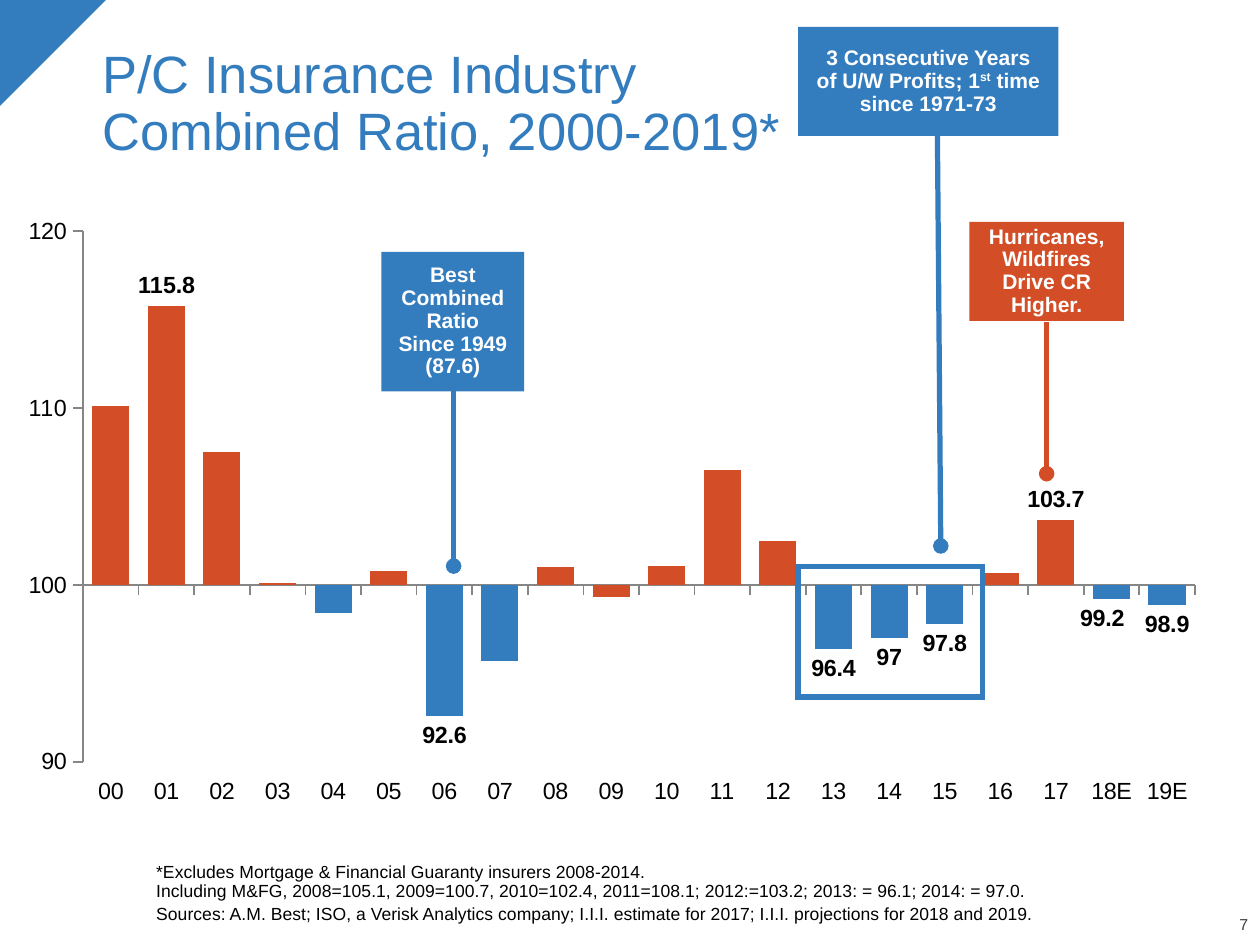
"""Build the slide on the combined ratio of the P/C insurance industry."""
from lxml import etree
from pptx import Presentation
from pptx.chart.data import CategoryChartData
from pptx.dml.color import RGBColor
from pptx.enum.chart import XL_CHART_TYPE as ChartType, XL_LABEL_POSITION as LabelPosition
from pptx.enum.chart import XL_TICK_LABEL_POSITION as TickLabels, XL_TICK_MARK as TickMark
from pptx.enum.shapes import MSO_CONNECTOR as Connector, MSO_SHAPE as Shape
from pptx.enum.text import MSO_ANCHOR as Anchor, PP_ALIGN as Align
from pptx.oxml import parse_xml
from pptx.oxml.ns import nsdecls, qn
from pptx.util import Inches, Pt

COLORS = {"blue": "337DBE", "red": "D34D27", "black": "000000",
          "white": "FFFFFF", "gray": "404040", "axis": "868686"}
RATIOS = {
    "00": 110.1, "01": 115.8, "02": 107.5, "03": 100.1, "04": 98.4,
    "05": 100.8, "06": 92.6, "07": 95.7, "08": 101, "09": 99.3,
    "10": 101.1, "11": 106.5, "12": 102.5, "13": 96.4, "14": 97,
    "15": 97.8, "16": 100.7, "17": 103.7, "18E": 99.2, "19E": 98.9,
}
PROFIT_YEARS = {"04", "06", "07", "13", "14", "15", "18E", "19E"}
LABELED_YEARS = {"01", "06", "13", "14", "15", "17", "18E", "19E"}


def color(name):
    return RGBColor.from_string(COLORS[name])


def manual_layout(**values):
    tags = "".join(f'<c:{tag} val="{value}"/>' for tag, value in values.items())
    return parse_xml(f'<c:layout {nsdecls("c")}><c:manualLayout>{tags}</c:manualLayout></c:layout>')


def write_text(shape, paragraphs, size, ink, bold=False, align=Align.LEFT,
               anchor=Anchor.BOTTOM, insets=(0.1, 0.05), space_before=0):
    frame = shape.text_frame
    frame.word_wrap = True
    frame.vertical_anchor = anchor
    frame.margin_left = frame.margin_right = Inches(insets[0])
    frame.margin_top = frame.margin_bottom = Inches(insets[1])
    for index, pieces in enumerate(paragraphs):
        paragraph = frame.add_paragraph() if index else frame.paragraphs[0]
        paragraph.alignment = align
        paragraph.line_spacing = 0.9
        paragraph.space_before = Pt(space_before if index else 0)
        for position, piece in enumerate(pieces):
            for line, words in enumerate(piece.split("\n")):
                if line:
                    paragraph.add_line_break()
                run = paragraph.add_run()
                run.text = words
                run.font.name = "Arial"
                run.font.size = Pt(size)
                run.font.bold = bold
                run.font.color.rgb = color(ink)
                if position % 2:
                    run._r.get_or_add_rPr().set("baseline", "30000")


class SlideBuilder:
    def __init__(self, slide, line_width=2.25):
        self.slide = slide
        self.line_width = Pt(line_width)

    def text(self, place, paragraphs, size, ink, **style):
        box = self.slide.shapes.add_textbox(*map(Inches, place))
        write_text(box, paragraphs, size, ink, **style)

    def shape(self, kind, place, fill=None, line=None):
        shape = self.slide.shapes.add_shape(kind, *map(Inches, place))
        shape.shadow.inherit = False
        if fill:
            shape.fill.solid()
            shape.fill.fore_color.rgb = color(fill)
        else:
            shape.fill.background()
        if line:
            shape.line.color.rgb = color(line)
            shape.line.width = self.line_width
            etree.SubElement(shape.line._get_or_add_ln(), qn("a:miter"), lim="800000")
        else:
            shape.line.fill.background()
        return shape

    def pointer(self, start, end, ink):
        line = self.slide.shapes.add_connector(Connector.STRAIGHT, *map(Inches, start + end))
        line.line.color.rgb = color(ink)
        line.line.width = self.line_width
        etree.SubElement(line.line._get_or_add_ln(), qn("a:tailEnd"), type="oval")
        etree.SubElement(line._element.spPr, qn("a:effectLst"))

    def callout(self, place, pieces, ink, start, end, inset=0.04):
        box = self.shape(Shape.RECTANGLE, place, fill=ink)
        write_text(box, [pieces], 9, "white", bold=True, align=Align.CENTER,
                   anchor=Anchor.MIDDLE, insets=(0.1, inset))
        self.pointer(start, end, ink)

    def ratio_chart(self, place):
        data = CategoryChartData(number_format="General")
        data.categories = list(RATIOS)
        data.add_series("Series 1", list(RATIOS.values()))
        chart = self.slide.shapes.add_chart(
            ChartType.COLUMN_CLUSTERED, *map(Inches, place), data).chart
        chart.has_legend = False
        chart.has_title = False
        chart.font.name = "Arial"
        chart.font.size = Pt(10)
        chart.font.color.rgb = color("black")
        self.style_axes(chart)
        self.style_columns(chart)
        plot_area = chart.element.find(".//" + qn("c:plotArea"))
        for layout in plot_area.findall(qn("c:layout")):
            plot_area.remove(layout)
        plot_area.insert(0, manual_layout(layoutTarget="inner", xMode="edge", yMode="edge",
                                          x=0.045, y=0.063, w=0.954, h=0.838))

    def style_axes(self, chart):
        for axis in (chart.category_axis, chart.value_axis):
            axis.has_major_gridlines = False
            axis.major_tick_mark = TickMark.OUTSIDE
            axis.minor_tick_mark = TickMark.NONE
            axis.tick_label_position = TickLabels.LOW
            axis.tick_labels.font.size = Pt(10)
            axis.format.line.color.rgb = color("axis")
            axis.format.line.width = Pt(0.75)
        values = chart.value_axis
        values.minimum_scale, values.maximum_scale = 90, 120
        values.major_unit = 10
        values.crosses_at = 100
        values.tick_labels.number_format = "0"
        values.tick_labels.number_format_is_linked = False

    def style_columns(self, chart):
        plot = chart.plots[0]
        plot.gap_width = 50
        plot.vary_by_categories = False
        series = plot.series[0]
        series.invert_if_negative = False
        series.format.fill.solid()
        series.format.fill.fore_color.rgb = color("red")
        for index, year in enumerate(RATIOS):
            if year in PROFIT_YEARS:
                fill = series.points[index].format.fill
                fill.solid()
                fill.fore_color.rgb = color("blue")
            if year in LABELED_YEARS:
                label = series.points[index].data_label
                label.font.size = Pt(10)
                label.font.bold = True
                label.font.color.rgb = color("black")
                label.position = LabelPosition.OUTSIDE_END
        estimate = list(RATIOS).index("18E")
        label = chart.element.xpath(f'.//c:dLbl[c:idx/@val="{estimate}"]')[0]
        label.insert(1, manual_layout(x=-0.008, y=0))


def main():
    presentation = Presentation()
    presentation.slide_width = Inches(7.5)
    presentation.slide_height = presentation.slide_width * 3 // 4
    builder = SlideBuilder(presentation.slides.add_slide(presentation.slide_layouts[6]))

    corner = builder.shape(Shape.RIGHT_TRIANGLE, (0, 0, 0.63, 0.63), fill="blue")
    corner.rotation = 90
    builder.text((7.07, 5.46, 0.36, 0.1), [["7"]], 6.8, "gray",
                 align=Align.RIGHT, insets=(0, 0))
    builder.text((0.51, 0.23, 4.37, 0.78),
                 [["P/C Insurance Industry\nCombined Ratio, 2000-2019*"]], 22.5, "blue")
    builder.text((0.93, 5.16, 6.3, 0.34), [
        ["*Excludes Mortgage & Financial Guaranty insurers 2008-2014.\n"
         "Including M&FG, 2008=105.1, 2009=100.7, 2010=102.4, 2011=108.1; "
         "2012:=103.2; 2013: = 96.1; 2014: = 97.0."],
        ["Sources: A.M. Best; ISO, a Verisk Analytics company; I.I.I. estimate for 2017; "
         "I.I.I. projections for 2018 and 2019."],
    ], 7.5, "black", insets=(0, 0), space_before=1.5)
    builder.ratio_chart((0.17, 1.14, 6.95, 3.77))
    builder.callout((5.77, 1.32, 0.92, 0.59), ["Hurricanes, Wildfires Drive CR Higher."],
                    "red", (6.23, 1.92), (6.23, 2.82))
    builder.callout((2.27, 1.5, 0.85, 0.83), ["Best Combined Ratio Since 1949 (87.6)"],
                    "blue", (2.7, 2.33), (2.7, 3.37), inset=0)
    builder.callout((4.75, 0.16, 1.55, 0.65),
                    ["3 Consecutive Years of U/W Profits; 1", "st", " time since 1971-73"],
                    "blue", (5.58, 0.81), (5.6, 3.25))
    builder.shape(Shape.RECTANGLE, (4.75, 3.37, 1.1, 0.78), line="blue")
    presentation.save("out.pptx")


if __name__ == "__main__":
    main()
